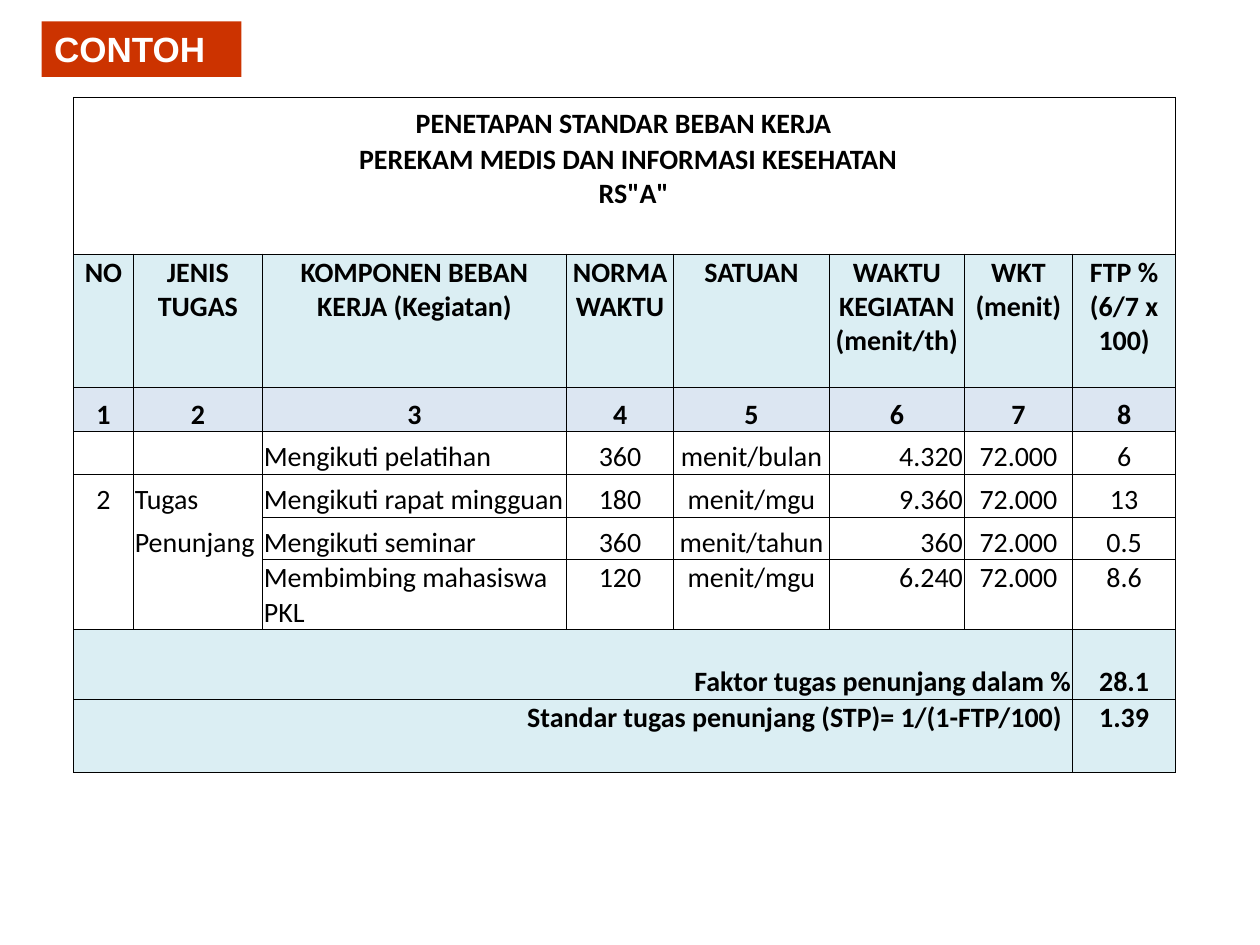
from lxml import etree
from pptx import Presentation
from pptx import util as u
from pptx.dml.color import RGBColor
from pptx.enum import shapes, text
from pptx.oxml.ns import qn


def colour(value):
    return RGBColor.from_string(value)


def block(row, column):
    if 0 <= row <= 2 and 0 <= column <= 7:
        return "title"
    if 5 <= row <= 8 and column in (0, 1):
        return "task", column
    if row in (9, 10) and 0 <= column <= 6:
        return "total", row
    return row, column


BLACK = "000000"
PALE_BLUE = "DBEEF3"
NUMBER_BLUE = "DCE6F2"
LEFT, CENTER, RIGHT = text.PP_ALIGN.LEFT, text.PP_ALIGN.CENTER, text.PP_ALIGN.RIGHT

deck = Presentation()
deck.slide_width, deck.slide_height = u.Cm(25.4), u.Cm(19.05)
page = deck.slides.add_slide(deck.slide_layouts[6])

label = page.shapes.add_shape(
    shapes.MSO_SHAPE.RECTANGLE, u.Cm(0.84), u.Cm(0.43), u.Cm(4.03), u.Cm(1.12)
)
label.shadow.inherit = False
label.fill.solid()
label.fill.fore_color.rgb = colour("CC3300")
label.line.fill.background()
label.text_frame.vertical_anchor = text.MSO_ANCHOR.TOP
para = label.text_frame.paragraphs[0]
para.alignment = LEFT
span = para.add_run()
span.text = "CONTOH"
span.font.name = "Arial"
span.font.size = u.Pt(20)
span.font.bold = True
span.font.color.rgb = colour("FFFFFF")

widths = [1.21, 2.6, 6.13, 2.16, 3.14, 2.72, 2.18, 2.08]
heights = [0.89, 1.39, 0.86, 2.69, 0.89, 0.86, 0.86, 0.86, 1.37, 1.4, 1.47]
rows = [
    ["", "", "PENETAPAN STANDAR BEBAN KERJA", "", "", "", "", ""],
    ["", "", "PEREKAM MEDIS DAN INFORMASI KESEHATAN\nRS\"A\"", "", "", "", "", ""],
    [""] * 8,
    ["NO", "JENIS TUGAS", "KOMPONEN BEBAN KERJA (Kegiatan)", "NORMA WAKTU", "SATUAN",
     "WAKTU KEGIATAN (menit/th)", "WKT (menit)", "FTP % (6/7 x 100)"],
    [str(number) for number in range(1, 9)],
    ["", "", "Mengikuti pelatihan", "360", "menit/bulan", "4.320", "72.000", "6"],
    ["2", "Tugas", "Mengikuti rapat mingguan", "180", "menit/mgu", "9.360", "72.000", "13"],
    ["", "Penunjang", "Mengikuti seminar", "360", "menit/tahun", "360", "72.000", "0.5"],
    ["", "", "Membimbing mahasiswa PKL", "120", "menit/mgu", "6.240", "72.000", "8.6"],
    ["", "", "", "", "Faktor tugas penunjang dalam %", "", "", "28.1"],
    ["", "", "Standar tugas penunjang (STP)= 1/(1-FTP/100)", "", "", "", "", "1.39"],
]
fills = {3: PALE_BLUE, 4: NUMBER_BLUE, 9: PALE_BLUE, 10: PALE_BLUE}
body_alignment = [CENTER, LEFT, LEFT, CENTER, CENTER, RIGHT, CENTER, CENTER]
title_indents = {"PENETAPAN": 3.06, "PEREKAM": 1.92, "RS\"A\"": 6.75}
top_rows = (3, 8, 10)

frame = page.shapes.add_table(
    len(rows), len(widths), u.Cm(1.48), u.Cm(1.96), u.Cm(sum(widths)), u.Cm(sum(heights))
)
table = frame.table
table.first_row = table.horz_banding = False
style = table._tbl.tblPr.find(qn("a:tableStyleId"))
style.text = "{2D5ABB26-0587-4C30-8999-92F81FD0307C}"
for column, width in zip(table.columns, widths):
    column.width = u.Cm(width)
for line, height in zip(table.rows, heights):
    line.height = u.Cm(height)
for row, first, last in [(0, 2, 5), (1, 2, 5), (9, 4, 6), (10, 2, 6)]:
    table.cell(row, first).merge(table.cell(row, last))

for row, values in enumerate(rows):
    for column, value in enumerate(values):
        cell = table.cell(row, column)
        cell.margin_left = cell.margin_right = cell.margin_top = u.Cm(0.03)
        cell.margin_bottom = 0
        cell.vertical_anchor = (
            text.MSO_ANCHOR.TOP if row in top_rows else text.MSO_ANCHOR.BOTTOM
        )

        neighbours = {
            "a:lnL": (row, column - 1),
            "a:lnR": (row, column + cell.span_width),
            "a:lnT": (row - 1, column),
            "a:lnB": (row + 1, column),
        }
        properties = cell._tc.get_or_add_tcPr()
        for side, neighbour in neighbours.items():
            if block(*neighbour) != block(row, column):
                border = etree.SubElement(properties, qn(side), w=str(u.Pt(0.5)))
                paint = etree.SubElement(border, qn("a:solidFill"))
                etree.SubElement(paint, qn("a:srgbClr"), val=BLACK)
        if row in fills:
            cell.fill.solid()
            cell.fill.fore_color.rgb = colour(fills[row])
        else:
            cell.fill.background()

        if not value:
            continue
        for index, words in enumerate(value.split("\n")):
            body = cell.text_frame
            para = body.add_paragraph() if index else body.paragraphs[0]
            if row < 3:
                para.alignment = LEFT
                indent = u.Cm(title_indents[words.split()[0]])
                para._p.get_or_add_pPr().set("marL", str(indent))
            elif row in (3, 4) or column == 7:
                para.alignment = CENTER
            elif row > 8:
                para.alignment = RIGHT
                if row == 10:
                    para._p.get_or_add_pPr().set("marR", str(u.Cm(0.18)))
            else:
                para.alignment = body_alignment[column]
            span = para.add_run()
            span.text = words
            span.font.name = "Calibri"
            span.font.size = u.Pt(16)
            span.font.bold = not 5 <= row <= 8
            span.font.color.rgb = colour(BLACK)

deck.save("out.pptx")
